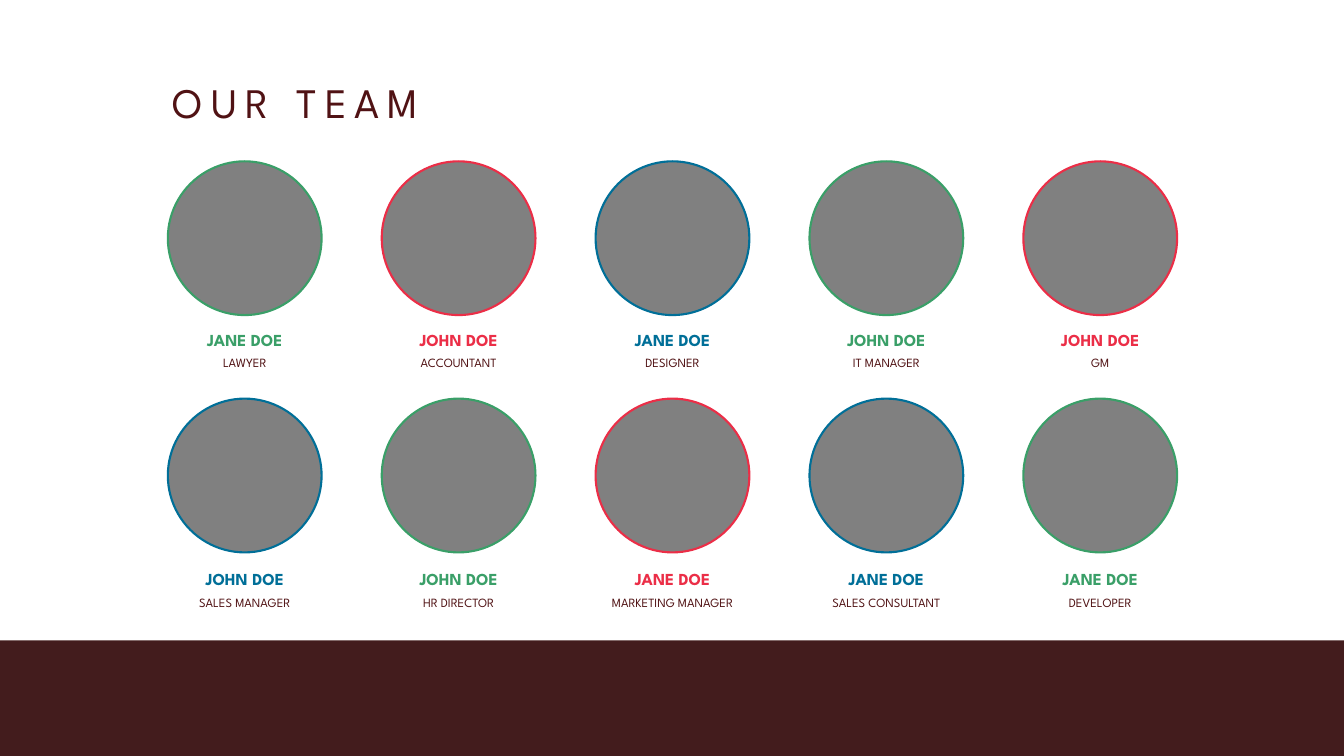
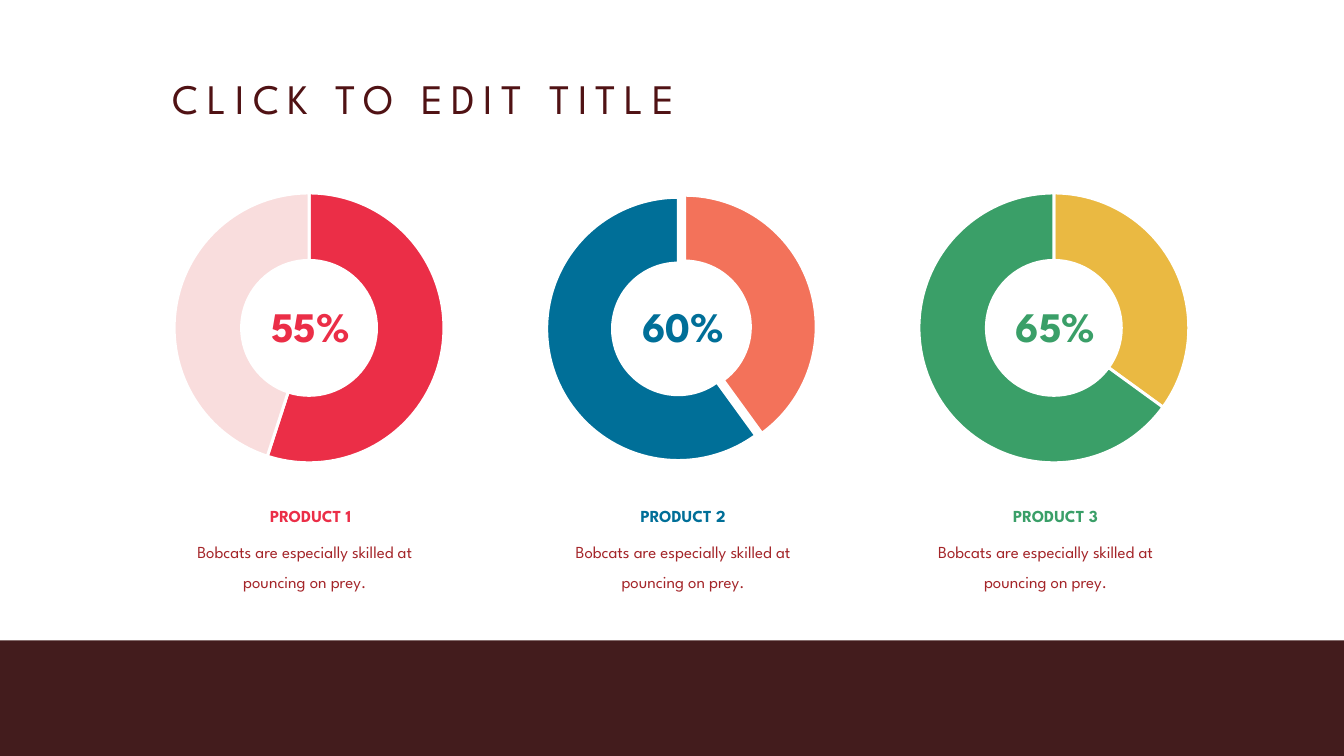
from pptx import Presentation
from pptx.chart.data import CategoryChartData
from pptx.dml.color import RGBColor
from pptx.enum.chart import XL_CHART_TYPE as ChartType
from pptx.enum.shapes import MSO_SHAPE as Shape
from pptx.enum.text import MSO_ANCHOR as Anchor, MSO_AUTO_SIZE as AutoSize, PP_ALIGN as Align
from pptx.oxml import parse_xml
from pptx.oxml.ns import nsdecls, qn
from pptx.util import Cm, Pt

COLORS = {
    "white": "FFFFFF", "band": "431C1D", "maroon": "501214", "brick": "A42529",
    "gray": "808080", "green": "3A9F68", "red": "EB2E47", "blue": "006F98",
    "pink": "F9DDDD", "coral": "F3725A", "yellow": "EAB942",
}
TEXT_FONT = "League Spartan"
CHART_FONT = "Open Sans"

# Each member: name, role, color, width of the role label in cm
TEAM_ROWS = [
    {"circle_top": 8.13, "name_top": 16.48, "members": [
        ("JANE DOE", "LAWYER", "green", 3.23),
        ("JOHN DOE", "ACCOUNTANT", "red", 4.98),
        ("JANE DOE", "DESIGNER", "blue", 3.66),
        ("JOHN DOE", "IT MANAGER", "green", 4.45),
        ("JOHN DOE", "GM", "red", 1.57)]},
    {"circle_top": 20.09, "name_top": 28.55, "members": [
        ("JOHN DOE", "SALES MANAGER", "blue", 5.89),
        ("JOHN DOE", "HR DIRECTOR", "green", 4.8),
        ("JANE DOE", "MARKETING MANAGER", "red", 7.57),
        ("JANE DOE", "SALES CONSULTANT", "blue", 6.96),
        ("JANE DOE", "DEVELOPER", "green", 4.24)]},
]
NAME_WIDTHS = {"JANE DOE": 4.55, "JOHN DOE": 4.75}
TEAM_LEFT, TEAM_PITCH, CIRCLE_SIZE = 8.46, 10.78, 7.75

DESCRIPTION = "Bobcats are especially skilled at pouncing on prey."
# description_shift moves the description off the middle of its ring, in cm
PRODUCTS = [
    {"name": "PRODUCT 1", "share": "55%", "color": "red", "values": (55, 45),
     "ring": ("red", "pink"), "explosion": 0, "description_shift": -0.3},
    {"name": "PRODUCT 2", "share": "60%", "color": "blue", "values": (40, 60),
     "ring": ("coral", "blue"), "explosion": 5, "description_shift": 0},
    {"name": "PRODUCT 3", "share": "65%", "color": "green", "values": (35, 65),
     "ring": ("yellow", "green"), "explosion": 0, "description_shift": -0.5},
]
RING_LEFT, RING_PITCH, RING_MIDDLE = 4.19, 18.77, 11.47
PLOT_AREA = {"x": 0.039, "y": 0.012, "w": 0.961, "h": 0.931}


def rgb(color):
    return RGBColor.from_string(COLORS[color])


def set_font(font, size, color, bold=False, name=TEXT_FONT):
    font.name, font.size, font.bold = name, Pt(size), bold
    font.color.rgb = rgb(color)


def add_titled_slide(prs, text, top, width, height, line_spacing=None):
    slide = prs.slides.add_slide(prs.slide_layouts[5])
    title = slide.shapes.title
    title.left, title.top, title.width, title.height = Cm(8.46), Cm(top), Cm(width), Cm(height)
    frame = title.text_frame
    frame.text = text
    frame.vertical_anchor = Anchor.TOP
    frame.auto_size = AutoSize.NONE
    paragraph = frame.paragraphs[0]
    paragraph.alignment = Align.LEFT
    paragraph.line_spacing = line_spacing
    set_font(paragraph.runs[0].font, 60, "maroon")
    for properties in title.element.iter(qn("a:rPr")):
        properties.set("spc", "1200")
    return slide


def move_band_to_layout(prs, slide):
    """Draw the bottom band and hand it to the layout that all slides share."""
    band = slide.shapes.add_shape(Shape.RECTANGLE, 0, Cm(32.28), prs.slide_width, Cm(6.1))
    band.shadow.inherit = False
    band.fill.solid()
    band.fill.fore_color.rgb = rgb("band")
    band.line.fill.background()
    slide.slide_layout.shapes.element.insert(2, band.element)


def add_label(slide, text, middle, top, width, height, size, color,
              bold=False, wrap=False, line_spacing=None):
    """Add text centred on the given middle."""
    label = slide.shapes.add_textbox(Cm(middle - width / 2), Cm(top), Cm(width), Cm(height))
    frame = label.text_frame
    frame.text = text
    frame.word_wrap = wrap
    frame.auto_size = AutoSize.SHAPE_TO_FIT_TEXT
    paragraph = frame.paragraphs[0]
    paragraph.alignment = Align.CENTER
    paragraph.line_spacing = line_spacing
    set_font(paragraph.runs[0].font, size, color, bold)


def add_member(slide, left, row, member):
    name, role, color, role_width = member
    circle = slide.shapes.add_shape(Shape.OVAL, Cm(left), Cm(row["circle_top"]),
                                    Cm(CIRCLE_SIZE), Cm(CIRCLE_SIZE))
    circle.shadow.inherit = False
    circle.fill.solid()
    circle.fill.fore_color.rgb = rgb("gray")
    circle.line.color.rgb = rgb(color)
    circle.line.width = Pt(3)
    middle = left + CIRCLE_SIZE / 2
    add_label(slide, name, middle, row["name_top"], NAME_WIDTHS[name], 1.27, 24, color, bold=True)
    add_label(slide, role, middle, row["name_top"] + 1.3, role_width, 1.02, 18, "maroon")


def set_white_line(line):
    line.color.rgb = rgb("white")
    line.width = Pt(4.25)


def add_ring(slide, left, product):
    data = CategoryChartData()
    data.categories = ["1", "2"]
    data.add_series("Series 1", product["values"])
    chart = slide.shapes.add_chart(ChartType.DOUGHNUT, Cm(left), Cm(9.55),
                                   Cm(21.92), Cm(14.61), data).chart
    chart.has_legend = False
    chart.has_title = False
    set_font(chart.font, 54, "white", name=CHART_FONT)

    plot = chart.plots[0]
    plot.has_data_labels = False
    series = plot.series[0]
    set_white_line(series.format.line)
    for index, color in enumerate(product["ring"]):
        look = series.points[index].format
        look.fill.solid()
        look.fill.fore_color.rgb = rgb(color)
        set_white_line(look.line)

    namespace = nsdecls("c")
    if product["explosion"]:
        explosion = parse_xml(f'<c:explosion {namespace} val="{product["explosion"]}"/>')
        series.format.line  # the outline element precedes the explosion
        next(chart.element.iter(qn("c:ser"))).find(qn("c:spPr")).addnext(explosion)
    next(chart.element.iter(qn("c:holeSize"))).set("val", "64")

    plot_area = next(chart.element.iter(qn("c:plotArea")))
    for automatic in plot_area.findall(qn("c:layout")):
        plot_area.remove(automatic)
    sizes = "".join(f'<c:{key} val="{value}"/>' for key, value in PLOT_AREA.items())
    plot_area.insert(0, parse_xml(
        f'<c:layout {namespace}><c:manualLayout><c:layoutTarget val="inner"/>'
        f'<c:xMode val="edge"/><c:yMode val="edge"/>{sizes}</c:manualLayout></c:layout>'))


def add_product(slide, left, product):
    middle, color = left + RING_MIDDLE, product["color"]
    add_ring(slide, left, product)
    add_label(slide, product["share"], middle, 15.04, 5.05, 2.82, 60, color, bold=True)
    add_label(slide, product["name"], middle, 25.37, 5.46, 1.27, 24, color, bold=True)
    add_label(slide, DESCRIPTION, middle + product["description_shift"], 26.67, 12.67, 3.2,
              24, "brick", wrap=True, line_spacing=1.5)


def main():
    prs = Presentation()
    prs.slide_width, prs.slide_height = Cm(67.74), Cm(38.1)

    team = add_titled_slide(prs, "OUR TEAM", 3.73, 35.61, 2.82)
    move_band_to_layout(prs, team)
    for row in TEAM_ROWS:
        for column, member in enumerate(row["members"]):
            add_member(team, TEAM_LEFT + column * TEAM_PITCH, row, member)

    products = add_titled_slide(prs, "CLICK TO EDIT TITLE", 3.81, 50.8, 3.18, line_spacing=0.9)
    for column, product in enumerate(PRODUCTS):
        add_product(products, RING_LEFT + column * RING_PITCH, product)

    prs.save("out.pptx")


if __name__ == "__main__":
    main()
